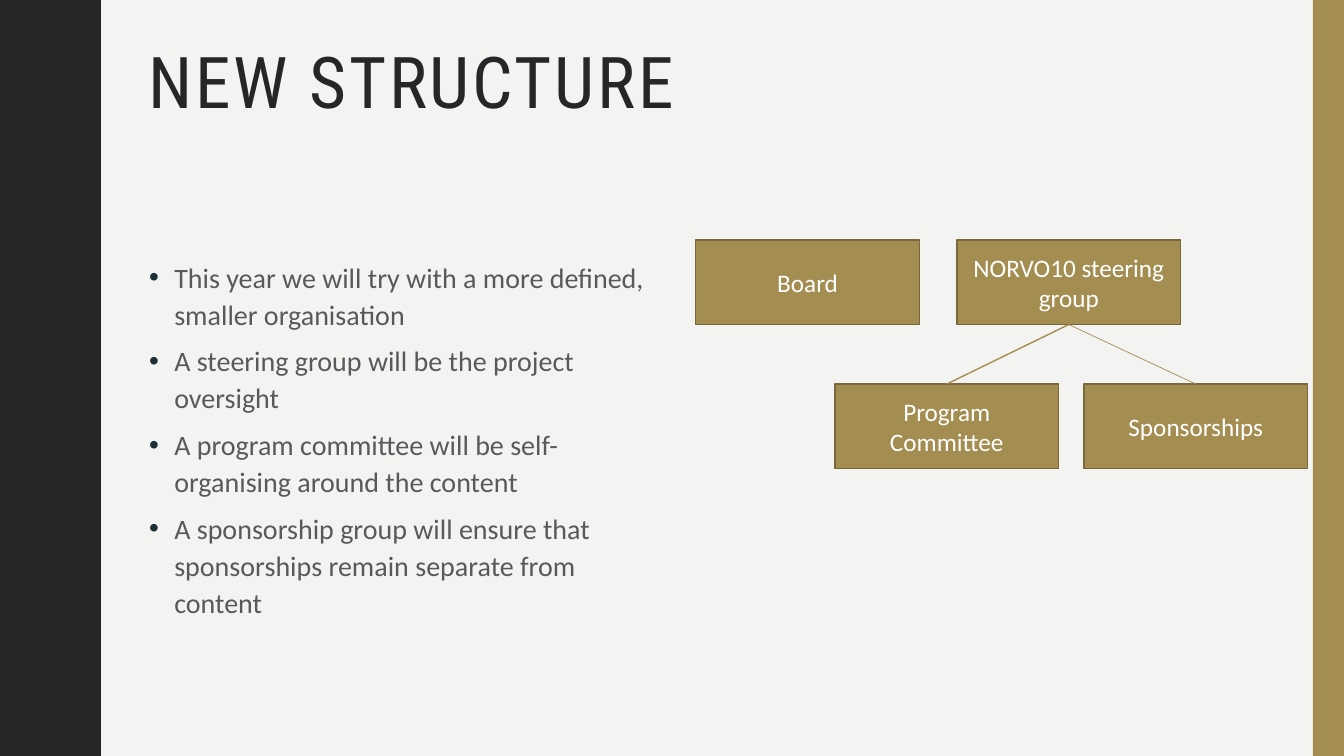
from lxml.etree import SubElement
from pptx import Presentation
from pptx.dml.color import RGBColor
from pptx.enum.shapes import MSO_CONNECTOR as Connector, MSO_SHAPE as Shape
from pptx.enum.text import MSO_ANCHOR as Anchor, PP_ALIGN as Align
from pptx.oxml.ns import qn
from pptx.util import Inches, Pt

COLORS = {
    "background": "F3F3F2",
    "dark": "262626",
    "gold": "A38D51",
    "gold_edge": "79683C",
    "body": "595959",
    "bullet": "1B2F36",
    "white": "FFFFFF",
}
BODY_FONT = "Calibri"
TITLE_FONT = "Roboto Condensed"

WAVE_PERIOD = 1.5
HALF_WAVE = [
    (0.78, 0), (0.78, 0.07), (0.79, 0.14), (0.8, 0.2), (0.81, 0.25),
    (0.83, 0.29), (0.85, 0.33), (0.87, 0.38), (0.89, 0.42), (0.91, 0.46),
    (0.93, 0.5), (0.95, 0.55), (0.96, 0.61), (0.97, 0.68), (0.97, 0.75),
]
POINTS = [
    "This year we will try with a more defined, smaller organisation",
    "A steering group will be the project oversight",
    "A program committee will be self-organising around the content",
    "A sponsorship group will ensure that sponsorships remain separate from content",
]
BOX_WIDTH, BOX_HEIGHT = 2.22, 0.84
UNITS = {
    "Board": (0, 0),
    "NORVO10 steering group": (2.59, 0),
    "Program Committee": (1.38, 1.43),
    "Sponsorships": (3.85, 1.43),
}
LINKS = [
    ("NORVO10 steering group", "Program Committee", 1),
    ("NORVO10 steering group", "Sponsorships", 0.5),
]


def color(name):
    """Return the named colour."""
    return RGBColor.from_string(COLORS[name])


def paint(shape, fill, edge=None):
    """Give a shape a flat fill and an optional thin outline."""
    shape.shadow.inherit = False
    shape.fill.solid()
    shape.fill.fore_color.rgb = color(fill)
    if edge:
        shape.line.color.rgb = color(edge)
        shape.line.width = Pt(1)
    else:
        shape.line.fill.background()


def style_text(paragraph, font_name, size, color_name):
    """Set the font of every run in a paragraph."""
    for run in paragraph.runs:
        run.font.name = font_name
        run.font.size = Pt(size)
        run.font.color.rgb = color(color_name)


def add_bullet(paragraph):
    """Add a coloured bullet with a hanging indent."""
    properties = paragraph._p.get_or_add_pPr()
    properties.set("marL", str(Inches(0.25)))
    properties.set("indent", str(Inches(-0.25)))
    bullet_color = SubElement(properties, qn("a:buClr"))
    SubElement(bullet_color, qn("a:srgbClr"), val=COLORS["bullet"])
    SubElement(properties, qn("a:buFont"), typeface="Arial")
    SubElement(properties, qn("a:buChar"), char="•")


def add_wavy_edge(slide, height):
    """Draw the dark band whose right side repeats one wave."""
    wave = HALF_WAVE + [(x, WAVE_PERIOD - y) for x, y in HALF_WAVE[-2::-1]]
    edge = [
        (x, y + period * WAVE_PERIOD)
        for period in range(round(height / WAVE_PERIOD))
        for x, y in wave
    ]
    builder = slide.shapes.build_freeform(0, 0, scale=Inches(1))
    builder.add_line_segments(edge + [(0, height)], close=True)
    paint(builder.convert_to_shape(), "dark")


def add_side_bar(slide, left, top, width, height):
    """Draw the gold bar along the right side."""
    bar = slide.shapes.add_shape(
        Shape.RECTANGLE, Inches(left), Inches(top), Inches(width), Inches(height))
    paint(bar, "gold")


def add_text_frame(slide, left, top, width, height):
    """Add a wrapping text box and return its text frame."""
    box = slide.shapes.add_textbox(
        Inches(left), Inches(top), Inches(width), Inches(height))
    box.text_frame.word_wrap = True
    return box.text_frame


def add_title(slide, left, top, width, height):
    """Write the spaced-out title."""
    text_frame = add_text_frame(slide, left, top, width, height)
    text_frame.text = "NEW STRUCTURE"
    paragraph = text_frame.paragraphs[0]
    paragraph.line_spacing = 0.9
    style_text(paragraph, TITLE_FONT, 51, "dark")
    paragraph.runs[0].font._element.set("spc", "200")


def add_points(slide, left, top, width, height):
    """Write the bulleted list."""
    text_frame = add_text_frame(slide, left, top, width, height)
    text_frame.text = "\n".join(POINTS)
    for paragraph in text_frame.paragraphs:
        paragraph.line_spacing = 1.1
        paragraph.space_before = Pt(7)
        add_bullet(paragraph)
        style_text(paragraph, BODY_FONT, 20, "body")


def add_unit(slide, name, left, top):
    """Draw one labelled box of the organisation chart."""
    unit = slide.shapes.add_shape(
        Shape.RECTANGLE, Inches(left), Inches(top),
        Inches(BOX_WIDTH), Inches(BOX_HEIGHT))
    paint(unit, "gold", "gold_edge")
    unit.text_frame.text = name
    unit.text_frame.word_wrap = True
    unit.text_frame.vertical_anchor = Anchor.MIDDLE
    paragraph = unit.text_frame.paragraphs[0]
    paragraph.alignment = Align.CENTER
    style_text(paragraph, BODY_FONT, 18, "white")
    return unit


def add_organisation(slide, left, top):
    """Draw the organisation chart and join its units."""
    units = {
        name: add_unit(slide, name, left + x, top + y)
        for name, (x, y) in UNITS.items()
    }
    for parent, child, width in LINKS:
        link = slide.shapes.add_connector(Connector.STRAIGHT, 0, 0, 0, 0)
        link.begin_connect(units[parent], 2)
        link.end_connect(units[child], 0)
        link.line.color.rgb = color("gold")
        link.line.width = Pt(width)
        SubElement(link._element.spPr, qn("a:effectLst"))


def main():
    """Build and save the slide."""
    presentation = Presentation()
    presentation.slide_width = Inches(13.33)
    presentation.slide_height = Inches(7.5)
    slide = presentation.slides.add_slide(presentation.slide_layouts[6])
    slide.background.fill.solid()
    slide.background.fill.fore_color.rgb = color("background")
    add_wavy_edge(slide, 7.5)
    add_side_bar(slide, 13.02, 0, 0.31, 7.5)
    add_title(slide, 1.37, 0.42, 11.13, 1.63)
    add_points(slide, 1.38, 2.5, 5.25, 3.96)
    add_organisation(slide, 6.9, 2.38)
    presentation.save("out.pptx")


if __name__ == "__main__":
    main()
